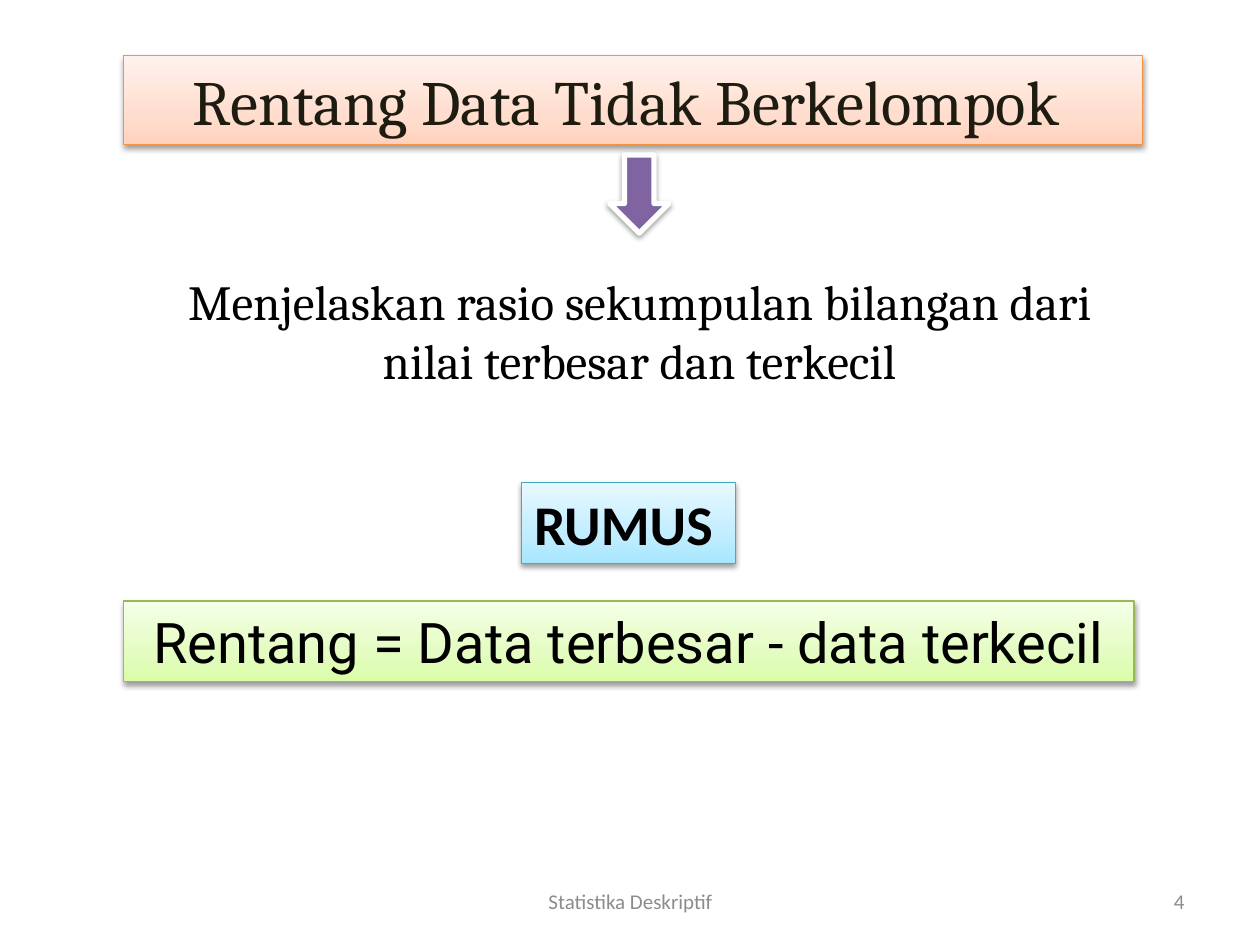
from dataclasses import dataclass

from lxml import etree
from pptx import Presentation
from pptx.dml.color import RGBColor
from pptx.enum.shapes import MSO_SHAPE
from pptx.enum.text import MSO_ANCHOR, PP_ALIGN
from pptx.oxml import parse_xml
from pptx.oxml.ns import nsdecls, qn
from pptx.util import Inches, Pt

RECT, ARROW = MSO_SHAPE.RECTANGLE, MSO_SHAPE.DOWN_ARROW
LEFT, MID, RIGHT = PP_ALIGN.LEFT, PP_ALIGN.CENTER, PP_ALIGN.RIGHT
MIDDLE = MSO_ANCHOR.MIDDLE


@dataclass(frozen=True)
class Theme:
    """Colours, fonts and type sizes of the slide."""
    peach: tuple = ("FFD2BD", "FFDED0", "FFF2ED")
    green: tuple = ("DAFDA7", "E4FCC2", "F5FFE7")
    blue: tuple = ("A7E6FF", "C1EDFF", "E7F8FF")
    stops: tuple = (0, 35, 100)
    orange: str = "F69240"
    leaf: str = "98B955"
    teal: str = "46AAC5"
    purple: str = "8064A2"
    white: str = "FFFFFF"
    black: str = "000000"
    dark: str = "1E1C11"
    grey: str = "8C8C8C"
    serif: str = "Cambria"
    sans: str = "Calibri"
    plain: str = "Roboto"
    title: int = 36
    large: int = 32
    body: int = 28
    small: int = 12
    thin: float = 0.75


THEME = Theme()


def part(box, x, y, wide, high):
    """Return the part of a box given in percent of its size."""
    left, top, width, height = box
    return (int(left + width * x / 100), int(top + height * y / 100),
            int(width * wide / 100), int(height * high / 100))


def write(shape, text, font, size, color, align=MID, bold=False):
    """Put one run of text in a shape."""
    frame = shape.text_frame
    frame.word_wrap = True
    frame.vertical_anchor = MIDDLE
    para = frame.paragraphs[0]
    para.alignment = align
    run = para.add_run()
    run.text = text
    run.font.name = font
    run.font.size = Pt(size)
    run.font.bold = bold
    run.font.color.rgb = RGBColor.from_string(color)


def blend(shape, colors):
    """Fill a shape with a gradient that rises from its foot."""
    stops = "".join(
        f'<a:gs pos="{stop * 1000}"><a:srgbClr val="{color}"/></a:gs>'
        for stop, color in zip(THEME.stops, colors))
    fill = parse_xml(
        f'<a:gradFill {nsdecls("a")} rotWithShape="1"><a:gsLst>{stops}</a:gsLst>'
        '<a:lin ang="16200000" scaled="0"/></a:gradFill>')
    shape._element.spPr.find(qn("a:prstGeom")).addnext(fill)


def shade(shape):
    """Give a shape a soft shadow below it."""
    effects = shape._element.spPr.find(qn("a:effectLst"))
    shadow = etree.SubElement(
        effects, qn("a:outerShdw"), blurRad="40000", dist="20000",
        dir="5400000", rotWithShape="0")
    color = etree.SubElement(shadow, qn("a:srgbClr"), val=THEME.black)
    etree.SubElement(color, qn("a:alpha"), val="38000")


def block(slide, box, fill, line, width, kind=RECT, shadow=True):
    """Add a shape with a plain or gradient fill."""
    shape = slide.shapes.add_shape(kind, *box)
    shape.shadow.inherit = False
    if isinstance(fill, tuple):
        blend(shape, fill)
    else:
        shape.fill.solid()
        shape.fill.fore_color.rgb = RGBColor.from_string(fill)
    shape.line.color.rgb = RGBColor.from_string(line)
    shape.line.width = Pt(width)
    if shadow:
        shade(shape)
    return shape


def heading(slide, box):
    """Place the title banner and the arrow under it."""
    banner = block(slide, part(box, 0, 0, 100, 50.35),
                   THEME.peach, THEME.orange, THEME.thin)
    write(banner, "Rentang Data Tidak Berkelompok ",
          THEME.serif, THEME.title, THEME.dark)
    block(slide, part(box, 47.7, 56, 5.8, 44),
          THEME.purple, THEME.white, 3, ARROW)


def meaning(slide, box):
    """Place the definition of the range."""
    panel = block(slide, box, THEME.white, THEME.white, 2, shadow=False)
    write(panel, "Menjelaskan rasio sekumpulan bilangan dari "
          "nilai terbesar dan terkecil", THEME.serif, THEME.body, THEME.black)


def formula(slide, box):
    """Place the label and the formula below it."""
    label = block(slide, part(box, 39.4, 0, 21.2, 40.5),
                  THEME.blue, THEME.teal, THEME.thin)
    write(label, "RUMUS", THEME.sans, THEME.large, THEME.black, LEFT, True)
    rule = block(slide, part(box, 0, 59.5, 100, 40.5),
                 THEME.green, THEME.leaf, THEME.thin)
    write(rule, "Rentang = Data terbesar - data terkecil",
          THEME.plain, THEME.large, THEME.black)


def footer(slide, box):
    """Place the course name and the slide number."""
    for text, x, wide, align in (("Statistika Deskriptif", 0, 52.1, MID),
                                 ("4", 61.7, 38.3, RIGHT)):
        note = slide.shapes.add_textbox(*part(box, x, 0, wide, 100))
        write(note, text, THEME.sans, THEME.small, THEME.grey, align)


def main():
    """Build the slide and save it."""
    deck = Presentation()
    deck.slide_width, deck.slide_height = Inches(10), Inches(7.5)
    slide = deck.slides.add_slide(deck.slide_layouts[6])
    page = (0, 0, deck.slide_width, deck.slide_height)
    heading(slide, part(page, 9.8, 5.87, 80.9, 18.8))
    meaning(slide, part(page, 10.5, 28, 80.5, 13.87))
    formula(slide, part(page, 9.8, 51.07, 80.2, 21.07))
    footer(slide, part(page, 34.2, 92.67, 60.8, 5.33))
    deck.save("out.pptx")


if __name__ == "__main__":
    main()
